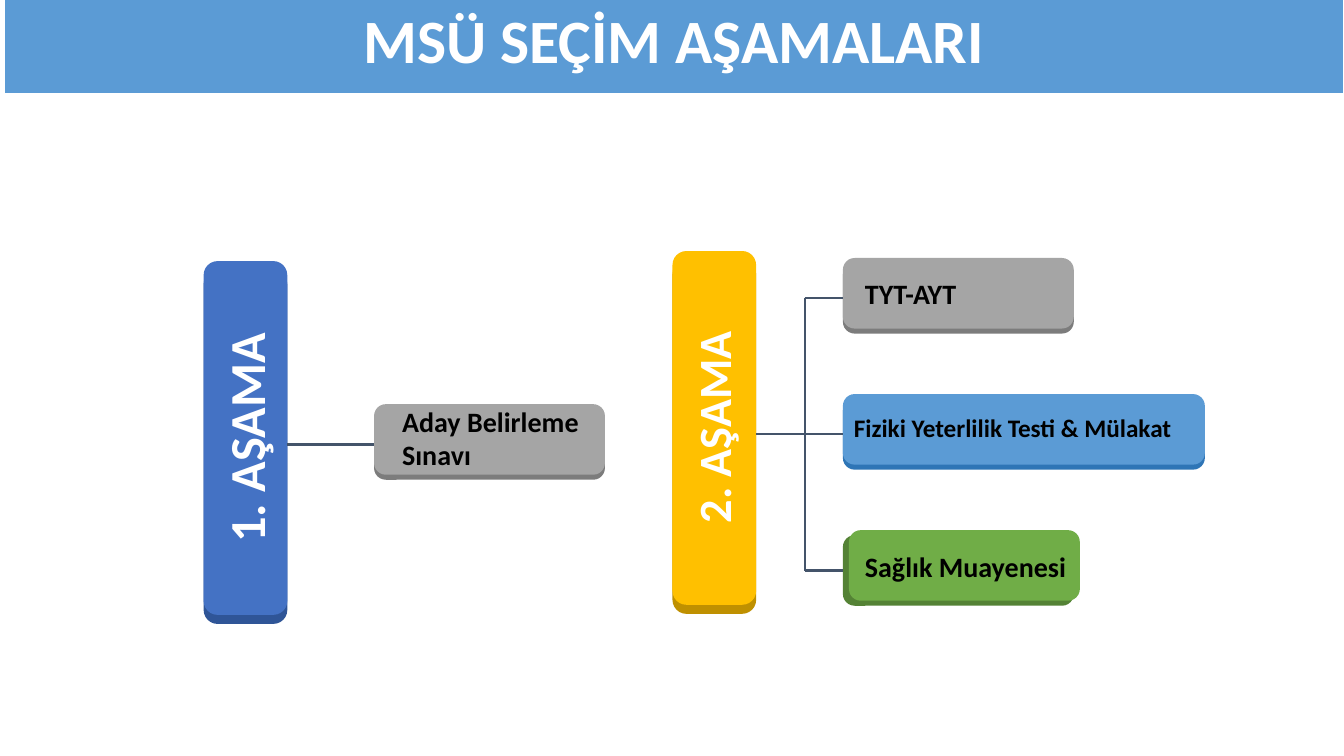
from lxml import etree
from pptx import Presentation
from pptx.dml.color import RGBColor as RGB
from pptx.enum.shapes import MSO_CONNECTOR as Line, MSO_SHAPE as Shape
from pptx.enum.text import MSO_ANCHOR as Anchor, MSO_AUTO_SIZE as Auto, PP_ALIGN as Align
from pptx.oxml.ns import qn
from pptx.util import Pt

PX = 9144  # 100 px to the inch
NAVY, WHITE, BLACK = "44546A", "FFFFFF", "000000"
TITLE = ("MSÜ SEÇİM AŞAMALARI", (4, -6, 1329, 99), "5B9BD5")
BAR_W, BAR_H, BAR_DROP = 83, 351, 9
BOX_H, BOX_DROP, PITCH = 70, 5, 135
TRUNK = 798

# bar: left, top, front and back colour; label: text, size, place
# boxes: width, shift of front, front and back colour, then the label
STAGES = [
    {"bar": (202, 259, "4472C4", "2F5597"),
     "label": ("1. AŞAMA", 36, (69, 399, 349, 71)),
     "left": 371, "top": 401,
     "boxes": [(229, 0, "A5A5A5", "7C7C7C",
                ("Aday Belirleme Sınavı", 20, (389, 396, 238, 77)))]},
    {"bar": (667, 249, "FFC000", "BF9000"),
     "label": ("2. AŞAMA", 33, (533, 391, 349, 66)),
     "left": 836, "top": 256,
     "boxes": [(229, 0, "A5A5A5", "7C7C7C",
                ("TYT-AYT", 20, (848, 269, 215, 45))),
               (359, 0, "5B9BD5", "2E75B6",
                ("Fiziki Yeterlilik Testi & Mülakat", 18, (837, 404, 348, 40))),
               (229, 6, "70AD47", "548235",
                ("Sağlık Muayenesi", 20, (848, 540, 235, 44)))]},
]

prs = Presentation()
prs.slide_width, prs.slide_height = 1333 * PX, 750 * PX
shapes = prs.slides.add_slide(prs.slide_layouts[6]).shapes


def emu(*nums):
    return [n * PX for n in nums]


def color(code):
    return RGB.from_string(code)


def block(place, fill, kind=Shape.ROUNDED_RECTANGLE):
    shape = shapes.add_shape(kind, *emu(*place))
    shape.shadow.inherit = False
    shape.fill.solid()
    shape.fill.fore_color.rgb = color(fill)
    shape.line.fill.background()
    return shape


def pair(x, y, w, h, drop, shift, front, back):
    """Draw a block over its darker edge and return the edge."""
    edge = block((x, y + drop, w, h), back)
    block((x + shift, y, w, h), front)
    return edge


def write(shape, text, size, ink, align):
    para = shape.text_frame.paragraphs[0]
    para.alignment = align
    run = para.add_run()
    run.text = text
    look = {"name": "Calibri", "size": Pt(size), "bold": True}
    for key, value in look.items():
        setattr(run.font, key, value)
    run.font.color.rgb = color(ink)
    return para


def label(text, size, place, ink=BLACK, align=Align.LEFT, turn=0):
    box = shapes.add_textbox(*emu(*place))
    box.rotation = turn
    look = {"word_wrap": True, "auto_size": Auto.SHAPE_TO_FIT_TEXT}
    for key, value in look.items():
        setattr(box.text_frame, key, value)
    write(box, text, size, ink, align)


def link(x1, y1, x2, y2):
    line = shapes.add_connector(Line.STRAIGHT, *emu(x1, y1, x2, y2))
    line.line.color.rgb = color(NAVY)
    line.line.width = Pt(1.5)
    etree.SubElement(line._element.spPr, qn("a:effectLst"))
    return line


text, place, fill = TITLE
title = block(place, fill, Shape.RECTANGLE)
title.line.color.rgb = color(WHITE)
title.line.width = Pt(1.5)
title.text_frame.vertical_anchor = Anchor.MIDDLE
write(title, text, 44, WHITE, Align.CENTER).line_spacing = 0.9

for stage in STAGES:
    x, y, front, back = stage["bar"]
    pair(x, y, BAR_W, BAR_H, BAR_DROP, 0, front, back)
    label(*stage["label"], WHITE, Align.CENTER, 270)

    left, boxes = stage["left"], stage["boxes"]
    tops = [stage["top"] + PITCH * i for i in range(len(boxes))]
    mids = [top + BOX_DROP + BOX_H // 2 for top in tops]
    if len(boxes) > 1:
        link(TRUNK, mids[0], TRUNK, mids[-1])
    for i, (w, shift, front, back, note) in enumerate(boxes):
        edge = pair(left, tops[i], w, BOX_H, BOX_DROP, shift, front, back)
        start = x + BAR_W if i == len(boxes) // 2 else TRUNK
        link(start, mids[i], left, mids[i]).end_connect(edge, 1)
        label(*note)

prs.save("out.pptx")
